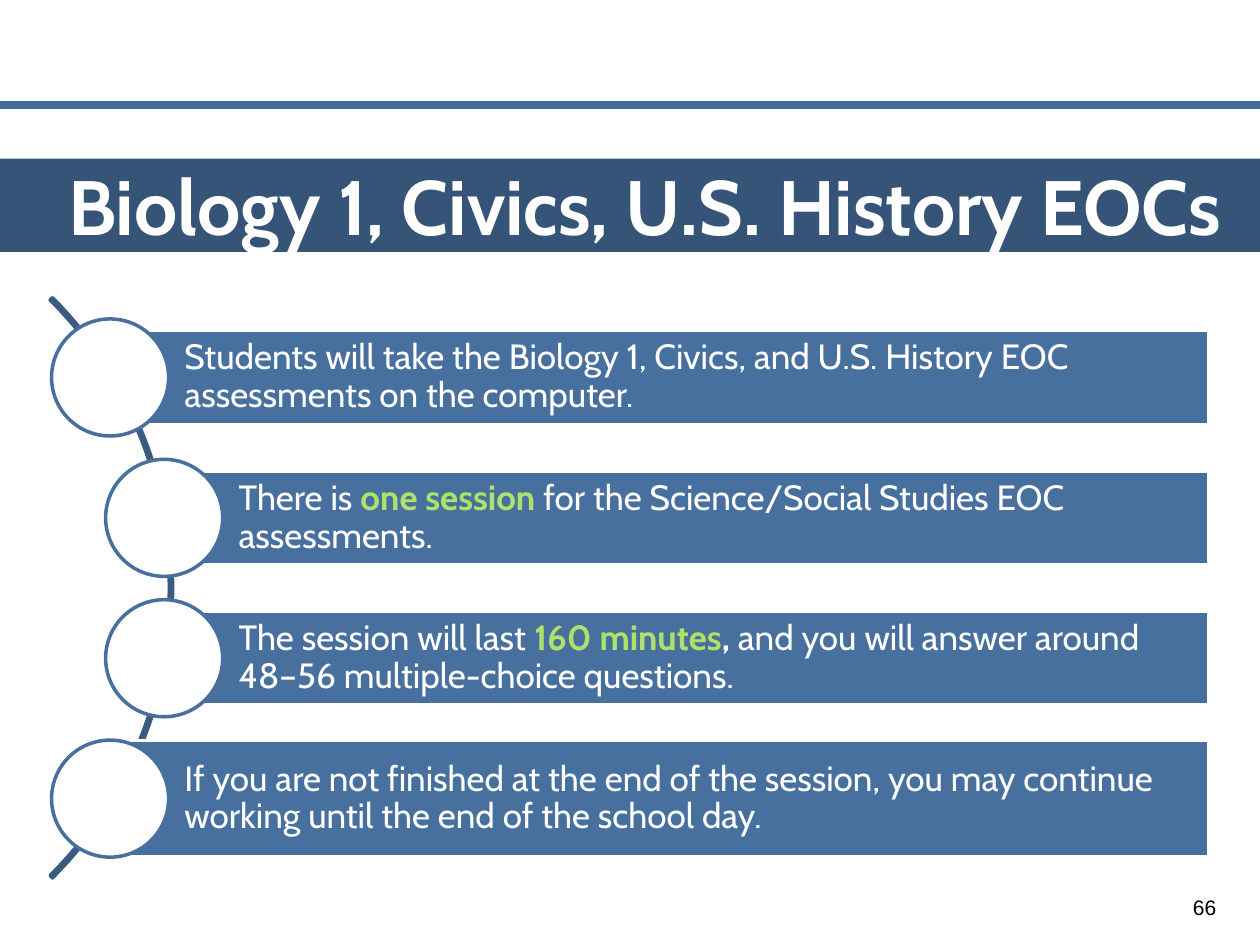
from dataclasses import dataclass
from typing import NamedTuple

from lxml import etree
from pptx import Presentation
from pptx.dml.color import RGBColor
from pptx.enum import shapes, text
from pptx.oxml.ns import qn
from pptx.util import Cm, Pt


@dataclass(frozen=True)
class Theme:
    white: str = "FFFFFF"
    black: str = "000000"
    bar: str = "48709F"
    rule: str = "446D9E"
    arc: str = "3A5A7F"
    title_band: str = "365477"
    accent: str = "AEE169"
    font: str = "Cabin"
    number_font: str = "Arial"
    title_size: float = 44
    body_size: float = 20
    number_size: float = 12
    outline: float = 2
    rule_width: float = 4.5


class Run(NamedTuple):
    text: str
    color: str
    bold: bool = False


class Step(NamedTuple):
    center_x: float
    bar_height: float
    runs: list[Run]


class Box(NamedTuple):
    left: float
    top: float
    width: float
    height: float


THEME = Theme()
OUTER_X, INNER_X, BAR_RIGHT = 2.22, 3.31, 24.37
FIRST_Y, STEP_PITCH, CIRCLE = 7.61, 2.83, 2.36

STEPS = [
    Step(OUTER_X, 1.89, [
        Run("Students will take the Biology 1, Civics, and U.S. History EOC "
            "assessments on the computer.", THEME.white)]),
    Step(INNER_X, 1.89, [
        Run("There is ", THEME.white),
        Run("one session ", THEME.accent, True),
        Run("for the Science/Social Studies EOC assessments.", THEME.white)]),
    Step(INNER_X, 1.89, [
        Run("The session will last ", THEME.white),
        Run("160 minutes", THEME.accent, True),
        Run(", ", THEME.white, True),
        Run("and you will answer around 48–56 multiple-choice questions.", THEME.white)]),
    Step(OUTER_X, 2.34, [
        Run("If you are not finished at the end of the session, you may continue "
            "working until the end of the school day.", THEME.white)]),
]


def add_preset(slide, kind, box: Box, fill: str | None = None, line: str | None = None):
    """Add a flat preset shape; a missing colour means no fill or no line."""
    shape = slide.shapes.add_shape(kind, *(Cm(length) for length in box))
    shape.shadow.inherit = False
    if fill:
        shape.fill.solid()
        shape.fill.fore_color.rgb = RGBColor.from_string(fill)
    else:
        shape.fill.background()
    if line:
        shape.line.color.rgb = RGBColor.from_string(line)
        shape.line.width = Pt(THEME.outline)
    else:
        shape.line.fill.background()
    return shape


def write_text(shape, runs: list[Run], size: float, font: str, frame_format: dict,
               paragraph_format: dict) -> None:
    """Write one paragraph of formatted runs into a shape."""
    frame = shape.text_frame
    paragraph = frame.paragraphs[0]
    for target, values in ((frame, frame_format), (paragraph, paragraph_format)):
        for name, value in values.items():
            setattr(target, name, value)
    for item in runs:
        run = paragraph.add_run()
        run.text = item.text
        for name, value in {"size": Pt(size), "name": font, "bold": item.bold}.items():
            setattr(run.font, name, value)
        run.font.color.rgb = RGBColor.from_string(item.color)


def add_rule(slide, y: float, width: float) -> None:
    connector = slide.shapes.add_connector(
        shapes.MSO_CONNECTOR.STRAIGHT, Cm(0), Cm(y), Cm(width), Cm(y))
    connector.line.color.rgb = RGBColor.from_string(THEME.rule)
    connector.line.width = Pt(THEME.rule_width)
    etree.SubElement(connector._element.spPr, qn("a:effectLst"))


def add_step(slide, step: Step, center_y: float) -> None:
    """Draw a text bar with a circle over its left end."""
    bar = add_preset(
        slide, shapes.MSO_SHAPE.RECTANGLE,
        Box(step.center_x, center_y - step.bar_height / 2,
            BAR_RIGHT - step.center_x, step.bar_height),
        THEME.bar, THEME.white)
    margins = {f"margin_{side}": Cm(0.15) for side in ("top", "right", "bottom")}
    write_text(bar, step.runs, THEME.body_size, THEME.font,
               {**margins, "margin_left": Cm(1.5), "word_wrap": True,
                "vertical_anchor": text.MSO_ANCHOR.MIDDLE},
               {"alignment": text.PP_ALIGN.LEFT, "line_spacing": 0.9})
    add_preset(slide, shapes.MSO_SHAPE.OVAL,
               Box(step.center_x - CIRCLE / 2, center_y - CIRCLE / 2, CIRCLE, CIRCLE),
               THEME.white, THEME.bar)


def main() -> None:
    presentation = Presentation()
    presentation.slide_width, presentation.slide_height = Cm(25.4), Cm(19.05)
    slide = presentation.slides.add_slide(presentation.slide_layouts[6])

    # Rule across the top
    add_rule(slide, 2.11, 25.4)

    # Arc that links the steps
    arc = add_preset(slide, shapes.MSO_SHAPE.BLOCK_ARC,
                     Box(-13.06, 3.58, 16.54, 16.54), line=THEME.arc)
    for index, value in enumerate((189, 27, 0.004)):
        arc.adjustments[index] = value

    # Steps
    for index, step in enumerate(STEPS):
        add_step(slide, step, FIRST_Y + index * STEP_PITCH)

    # Slide number
    number = slide.shapes.add_textbox(Cm(23.7), Cm(17.78), Cm(1.17), Cm(1.02))
    write_text(number, [Run("66", THEME.black)], THEME.number_size, THEME.number_font,
               {"word_wrap": True, "vertical_anchor": text.MSO_ANCHOR.MIDDLE},
               {"alignment": text.PP_ALIGN.CENTER})

    # Title band
    band = add_preset(slide, shapes.MSO_SHAPE.RECTANGLE,
                      Box(-0.02, 3.2, 25.42, 1.88), THEME.title_band)
    margins = {f"margin_{side}": Cm(0) for side in ("top", "right", "bottom")}
    write_text(band, [Run("Biology 1, Civics, U.S. History EOCs", THEME.white, True)],
               THEME.title_size, THEME.font,
               {**margins, "margin_left": Cm(0.64), "word_wrap": True,
                "vertical_anchor": text.MSO_ANCHOR.TOP},
               {"alignment": text.PP_ALIGN.CENTER})

    presentation.save("out.pptx")


if __name__ == "__main__":
    main()
